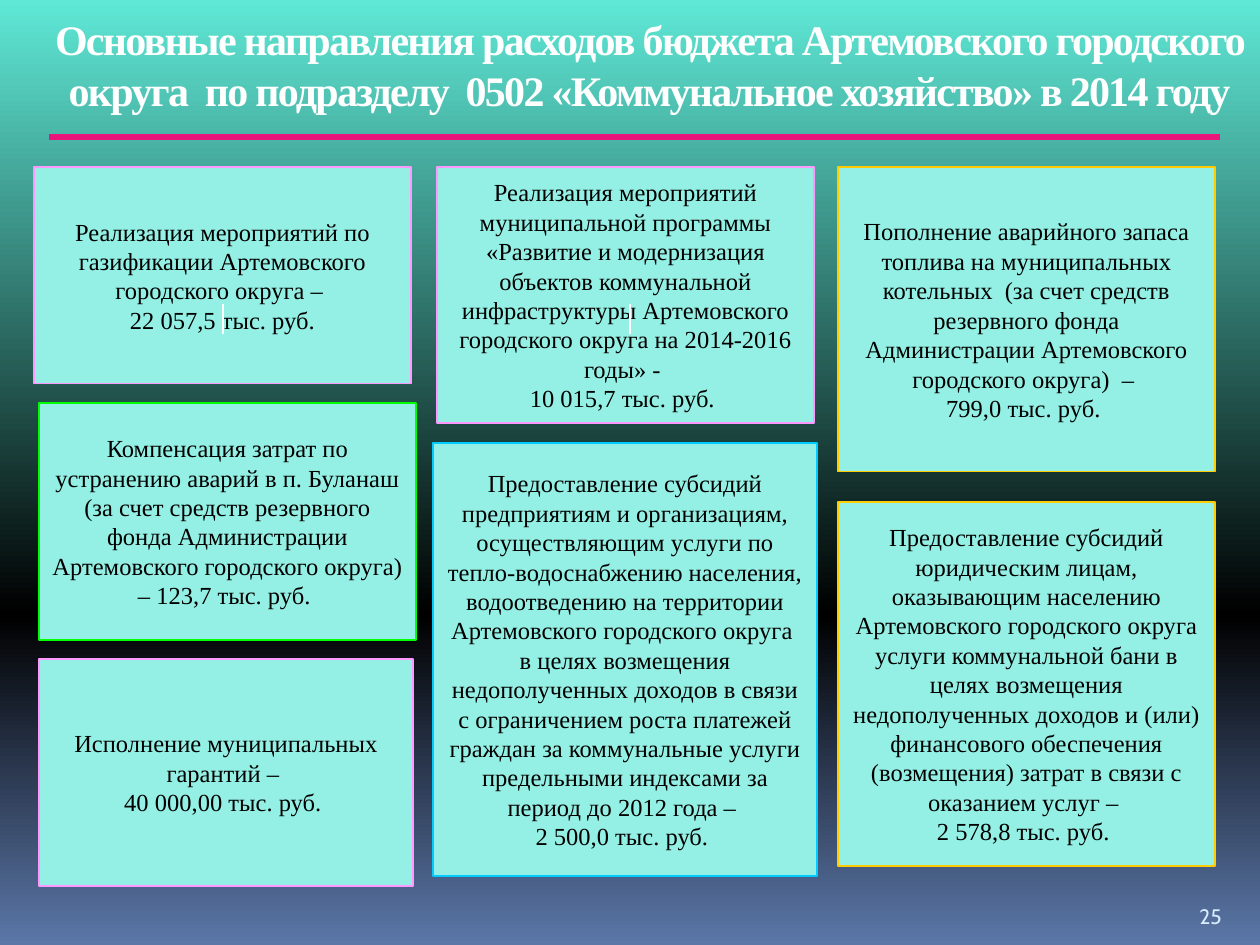
"""Build the slide on communal services spending in 2014."""
from lxml import etree
from pptx import Presentation
from pptx.dml.color import RGBColor as Rgb
from pptx.enum.shapes import MSO_CONNECTOR as Conn, MSO_SHAPE as Kind
from pptx.enum.text import MSO_ANCHOR as Anchor, MSO_AUTO_SIZE as Fit, PP_ALIGN as Align
from pptx.oxml import parse_xml
from pptx.oxml.ns import qn
from pptx.util import Emu, Pt

PX = 914400 // 126
SERIF = "Times New Roman"
HUES = {"box": "94F0E4", "pink": "FF99FF", "green": "00FF00", "blue": "00CCFF",
        "gold": "FFCC00", "white": "FFFFFF", "black": "000000",
        "rule": "EA157A", "page": "D6ECFF"}
STOPS = [(0, "5FE8D6"), (65, "000000"), (100, "5B77A8")]

TITLE = ("Основные направления расходов бюджета Артемовского городского округа  "
         "по подразделу  0502 «Коммунальное хозяйство» в 2014 году")
BOXES = [
    ((34, 167, 377, 217), "pink", None,
     ["Реализация мероприятий по газификации Артемовского городского округа – ",
      "22 057,5 тыс. руб."]),
    ((437, 167, 377, 256), "pink", 0,
     ["Реализация мероприятий муниципальной программы «Развитие и модернизация "
      "объектов коммунальной инфраструктуры Артемовского городского округа "
      "на 2014-2016 годы» - ", "10 015,7 тыс. руб. "]),
    ((39, 659, 374, 227), "pink", None,
     ["Исполнение муниципальных гарантий – ", "40 000,00 тыс. руб. "]),
    ((39, 403, 377, 237), "green", None,
     ["Компенсация затрат по устранению аварий в п. Буланаш (за счет средств "
      "резервного фонда Администрации Артемовского городского округа) – "
      "123,7 тыс. руб. "]),
    ((433, 443, 384, 433), "blue", None,
     ["Предоставление субсидий предприятиям и организациям, осуществляющим услуги "
      "по тепло-водоснабжению населения, водоотведению на территории Артемовского "
      "городского округа  в целях возмещения недополученных доходов в связи "
      "с ограничением роста платежей граждан за коммунальные услуги предельными "
      "индексами за период до 2012 года – ", "2 500,0 тыс. руб. "]),
    ((838, 167, 377, 305), "gold", None,
     ["Пополнение аварийного запаса топлива на муниципальных котельных  (за счет "
      "средств резервного фонда Администрации Артемовского городского округа)  – ",
      "799,0 тыс. руб. "]),
    ((838, 502, 377, 364), "gold", None,
     ["Предоставление субсидий юридическим лицам, оказывающим населению Артемовского "
      "городского округа услуги коммунальной бани в целях возмещения недополученных "
      "доходов и (или) финансового обеспечения (возмещения) затрат в связи "
      "с оказанием услуг – ", "2 578,8 тыс. руб. "]),
]
LINES = [((223, 304, 223, 334), "white", 0.75),
         ((630, 304, 630, 334), "white", 0.75),
         ((49, 137, 1220, 137), "rule", 3.75)]


def emu(*nums):
    return [Emu(num * PX) for num in nums]


def hue(name):
    return Rgb.from_string(HUES[name])


def write(frame, lines, size, tint, font=SERIF, align=Align.CENTER, bold=False):
    frame.word_wrap = True
    frame.text = "\n".join(lines)
    for para in frame.paragraphs:
        para.alignment = align
        for run in para.runs:
            run.font.name, run.font.size, run.font.bold = font, Pt(size), bold
            run.font.color.rgb = hue(tint)


def paint(slide):
    fill = slide.background.fill
    fill.gradient()
    fill.gradient_angle = 270
    grad = slide.background._cSld.find(".//" + qn("a:gradFill"))
    stops = grad.find(qn("a:gsLst"))
    for stop in list(stops):
        stops.remove(stop)
    for spot, code in STOPS:
        stop = etree.SubElement(stops, qn("a:gs"), pos=str(spot * 1000))
        etree.SubElement(stop, qn("a:srgbClr"), val=code)


def add_box(slide, place, edge, inset, lines):
    box = slide.shapes.add_shape(Kind.RECTANGLE, *emu(*place))
    box.shadow.inherit = False
    box.fill.solid()
    box.fill.fore_color.rgb = hue("box")
    box.line.color.rgb = hue(edge)
    box.line.width = Pt(0.75)
    frame = box.text_frame
    frame.vertical_anchor = Anchor.MIDDLE
    if inset is not None:
        frame.margin_left = frame.margin_right = Emu(inset)
        frame.margin_top = frame.margin_bottom = Emu(inset)
    write(frame, lines, 14, "black")


def add_line(slide, ends, tint, width):
    line = slide.shapes.add_connector(Conn.STRAIGHT, *emu(*ends))
    line.line.color.rgb = hue(tint)
    line.line.width = Pt(width)
    etree.SubElement(line._element.spPr, qn("a:effectLst"))


def main():
    deck = Presentation()
    deck.slide_width, deck.slide_height = emu(1260, 945)
    slide = deck.slides.add_slide(deck.slide_layouts[5])
    paint(slide)

    title = slide.shapes.title
    title.left, title.top, title.width, title.height = emu(39, 0, 1221, 128)
    frame = title.text_frame
    write(frame, [TITLE], 24, "white", bold=True)
    frame.auto_size = Fit.NONE
    frame.vertical_anchor = Anchor.MIDDLE
    frame.paragraphs[0].runs[0].font._element.set("spc", "-100")

    page = slide.shapes.add_textbox(*emu(1187, 885, 63, 50)).text_frame
    page.vertical_anchor = Anchor.BOTTOM
    write(page, ["25"], 12, "page", "Cabin", Align.LEFT)

    for box in BOXES:
        add_box(slide, *box)
    for line in LINES:
        add_line(slide, *line)
    deck.save("out.pptx")


if __name__ == "__main__":
    main()
